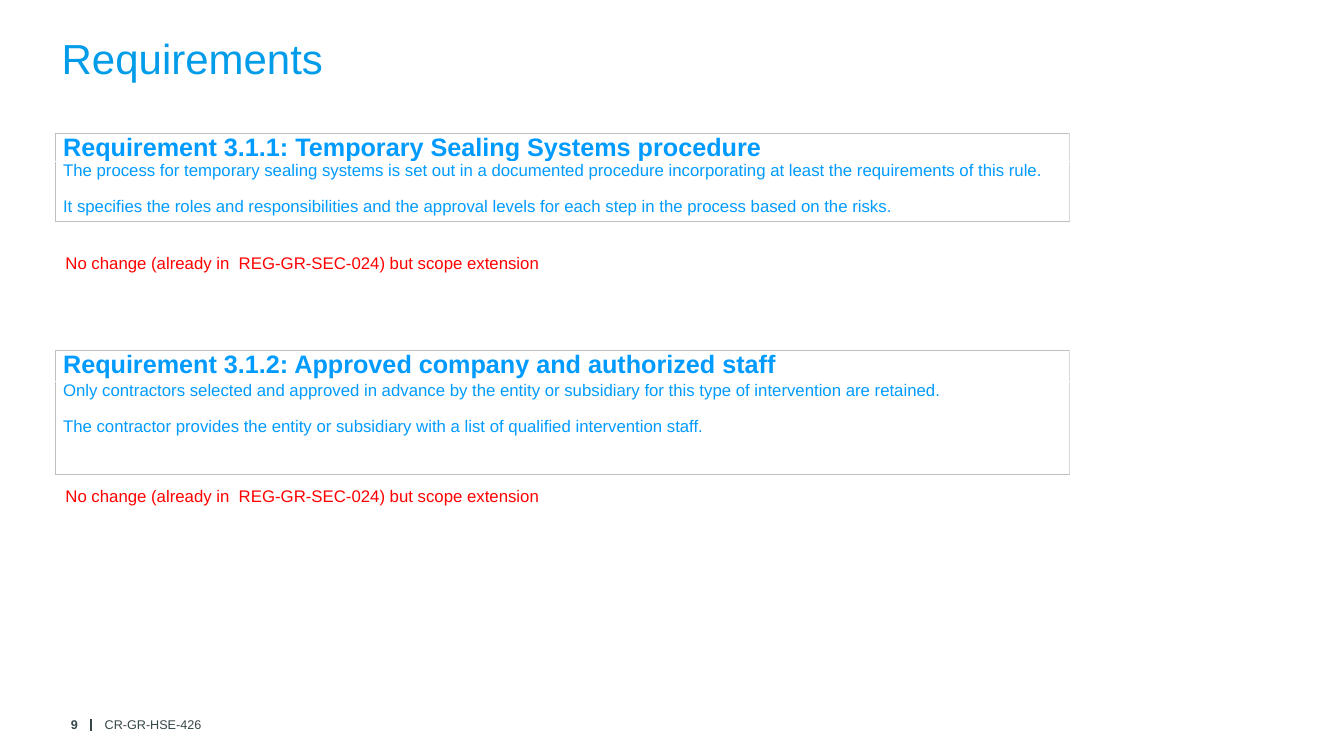
from lxml import etree
from pptx import Presentation
from pptx import util as u
from pptx.dml.color import RGBColor
from pptx.enum import shapes, text
from pptx.oxml import ns

HUES = {"title": "009CEA", "rule": "009BFF", "note": "FF0000",
        "foot": "374649", "edge": "BFBFBF", "side": "D9D9D9"}
LEFT, WIDTH = 1.4, 25.55
NOTE = "No change (already in  REG-GR-SEC-024) but scope extension"
RULES = [
    (3.36, 0.7, 1.51, 6.25,
     "Requirement 3.1.1: Temporary Sealing Systems procedure",
     ["The process for temporary sealing systems is set out in a documented "
      "procedure incorporating at least the requirements of this rule.",
      "It specifies the roles and responsibilities and the approval levels "
      "for each step in the process based on the risks."]),
    (8.84, 0.7, 2.35, 12.12,
     "Requirement 3.1.2: Approved company and authorized staff",
     ["Only contractors selected and approved in advance by the entity or "
      "subsidiary for this type of intervention are retained.",
      "The contractor provides the entity or subsidiary with a list of "
      "qualified intervention staff."]),
]


def style(para, size, hue, bold=False):
    for run in para.runs:
        font = run.font
        font.name = "Arial"
        font.size = u.Pt(size)
        font.bold = bold
        font.color.rgb = RGBColor.from_string(HUES[hue])


def add_text(slide, words, box, size, hue, bold=False,
             align=text.PP_ALIGN.LEFT, anchor=text.MSO_ANCHOR.TOP):
    frame = slide.shapes.add_textbox(*map(u.Cm, box)).text_frame
    frame.word_wrap = True
    frame.vertical_anchor = anchor
    frame.text = words
    para = frame.paragraphs[0]
    para.alignment = align
    style(para, size, hue, bold)


def add_edges(cell, edges):
    props = cell._tc.get_or_add_tcPr()
    for spot, (side, hue) in enumerate(edges):
        line = etree.Element(ns.qn("a:ln" + side), w=str(u.Pt(1)))
        fill = etree.SubElement(line, ns.qn("a:solidFill"))
        etree.SubElement(fill, ns.qn("a:srgbClr"), val=HUES[hue])
        props.insert(spot, line)


def fill_cell(cell, lines, size, bold, edges):
    cell.fill.background()
    cell.margin_left = cell.margin_right = u.Cm(0.19)
    cell.margin_top = cell.margin_bottom = 0
    cell.text_frame.text = "\n".join(lines)
    for spot, para in enumerate(cell.text_frame.paragraphs):
        para.alignment = text.PP_ALIGN.JUSTIFY
        para.space_before = u.Pt(6 if spot else 0)
        para.space_after = u.Pt(6)
        style(para, size, "rule", bold)
    add_edges(cell, edges)


def add_rule(slide, top, head, body, heading, lines):
    table = slide.shapes.add_table(
        2, 1, u.Cm(LEFT), u.Cm(top), u.Cm(WIDTH), u.Cm(head + body)).table
    table.first_row = table.horz_banding = False
    table.rows[0].height = u.Cm(head)
    table.rows[1].height = u.Cm(body)
    sides = [("L", "edge"), ("R", "side")]
    fill_cell(table.cell(0, 0), [heading], 18, True, sides + [("T", "edge")])
    fill_cell(table.cell(1, 0), lines, 12, False, sides + [("B", "edge")])


def set_title(slide, words):
    title = slide.shapes.title
    title.left, title.top, title.width, title.height = map(
        u.Cm, (1.3, 0.69, 27, 2.79))
    frame = title.text_frame
    frame.text = words
    frame.auto_size = text.MSO_AUTO_SIZE.NONE
    frame.vertical_anchor = text.MSO_ANCHOR.TOP
    frame.paragraphs[0].alignment = text.PP_ALIGN.LEFT
    style(frame.paragraphs[0], 30, "title")


def add_foot(slide):
    mid = text.MSO_ANCHOR.MIDDLE
    add_text(slide, "9", (0.61, 17.91, 1.6, 0.71), 9, "foot", True,
             text.PP_ALIGN.RIGHT, mid)
    add_text(slide, "CR-GR-HSE-426", (2.39, 17.91, 10, 0.71), 9, "foot",
             anchor=mid)
    bar = slide.shapes.add_connector(
        shapes.MSO_CONNECTOR.STRAIGHT,
        u.Cm(2.29), u.Cm(18.13), u.Cm(2.29), u.Cm(18.41))
    bar.line.width = u.Pt(1)
    bar.line.color.rgb = RGBColor.from_string(HUES["foot"])
    etree.SubElement(bar._element.spPr, ns.qn("a:effectLst"))


def main():
    deck = Presentation()
    deck.slide_width, deck.slide_height = u.Cm(33.87), u.Cm(19.05)
    slide = deck.slides.add_slide(deck.slide_layouts[5])
    set_title(slide, "Requirements")
    for top, head, body, below, heading, lines in RULES:
        add_rule(slide, top, head, body, heading, lines)
        add_text(slide, NOTE, (LEFT, below, WIDTH, 1.4), 12, "note")
    add_foot(slide)
    deck.save("out.pptx")


if __name__ == "__main__":
    main()
